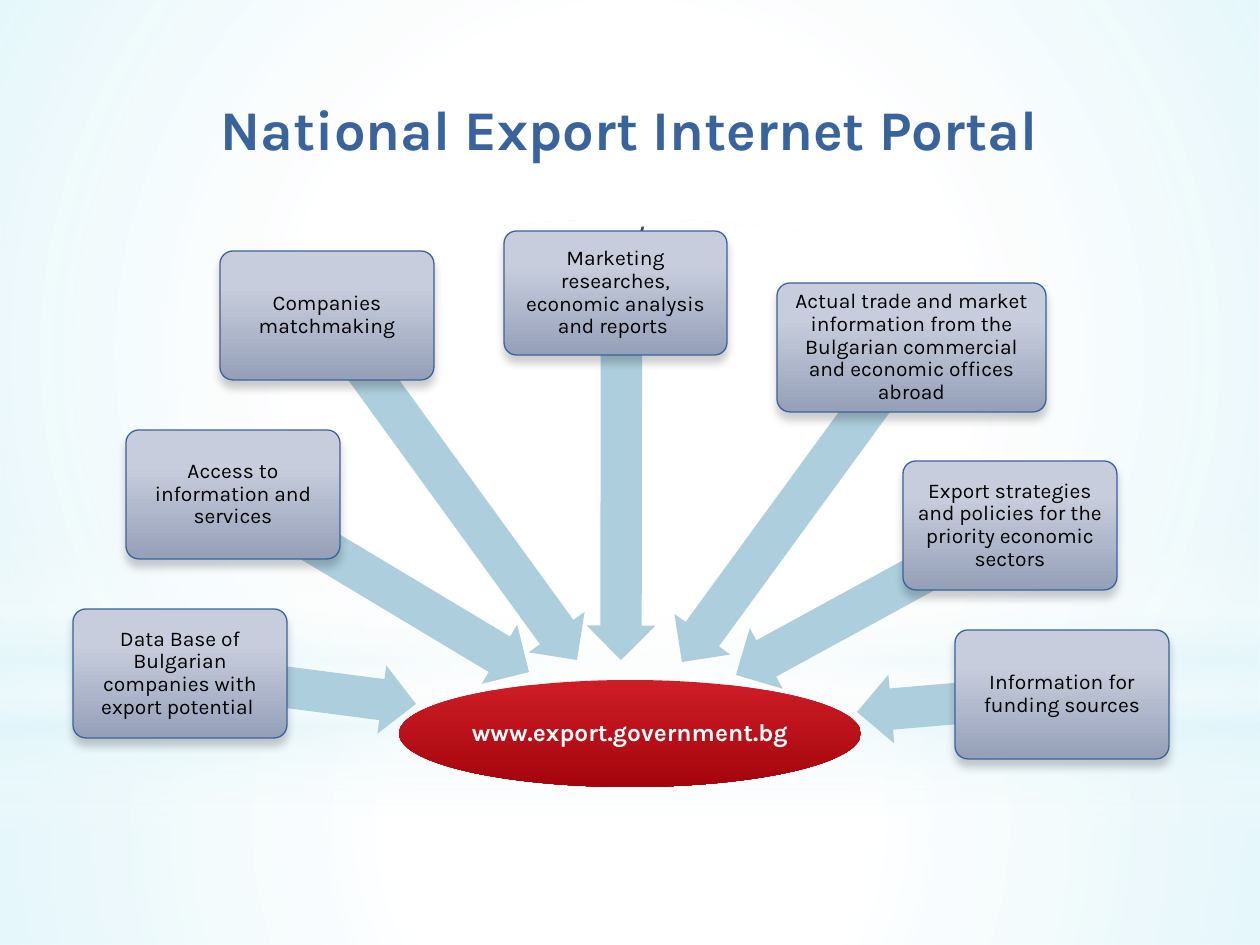
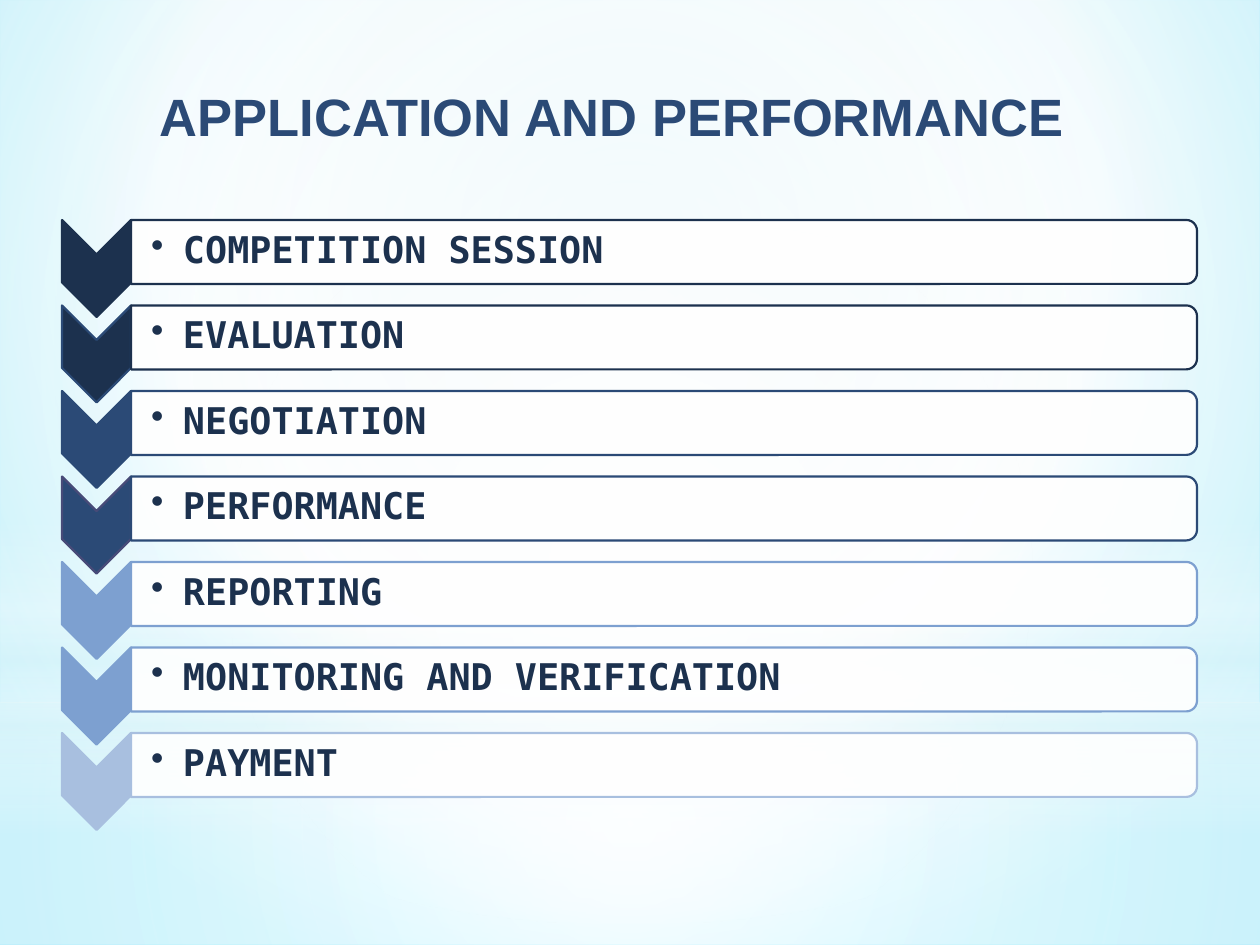
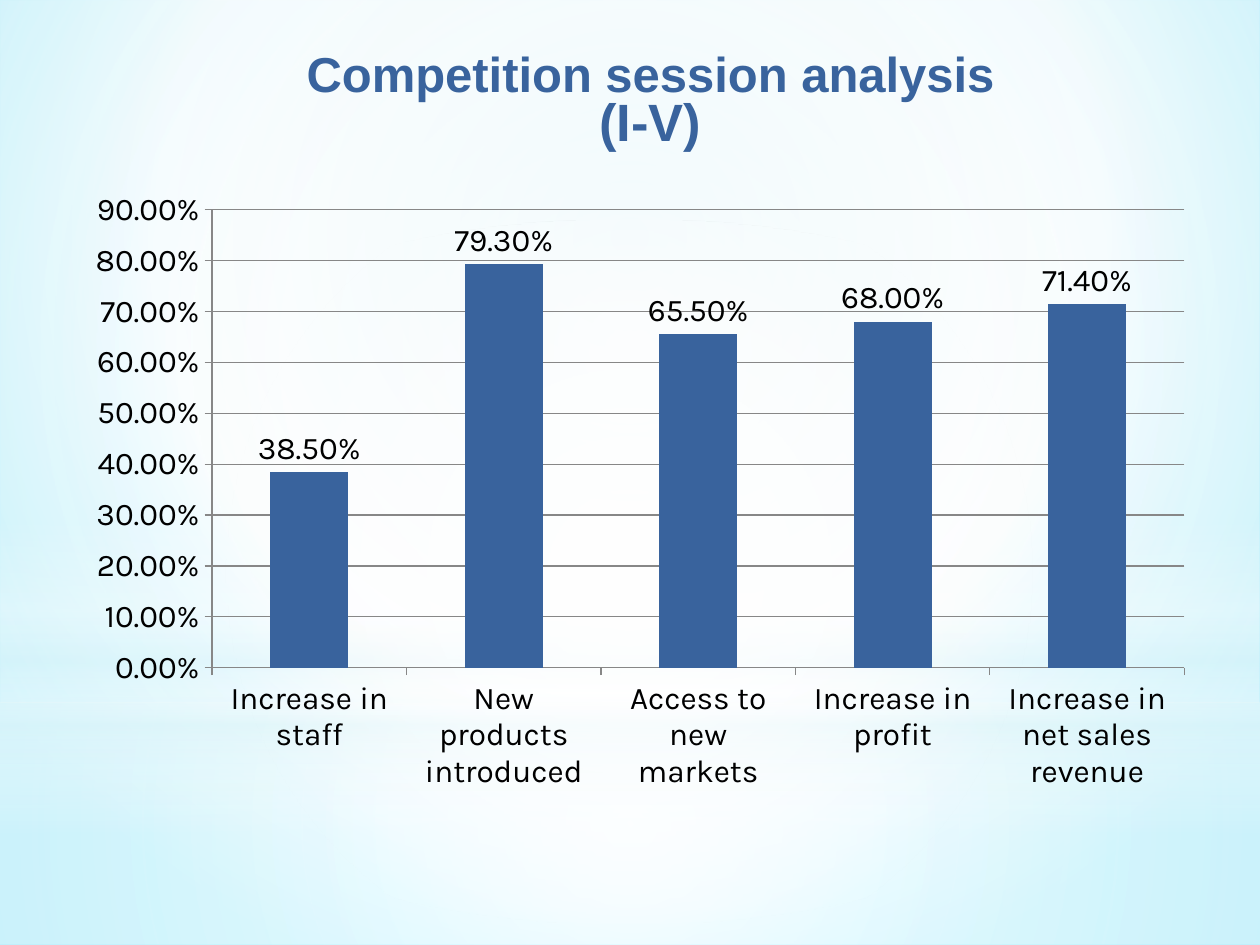
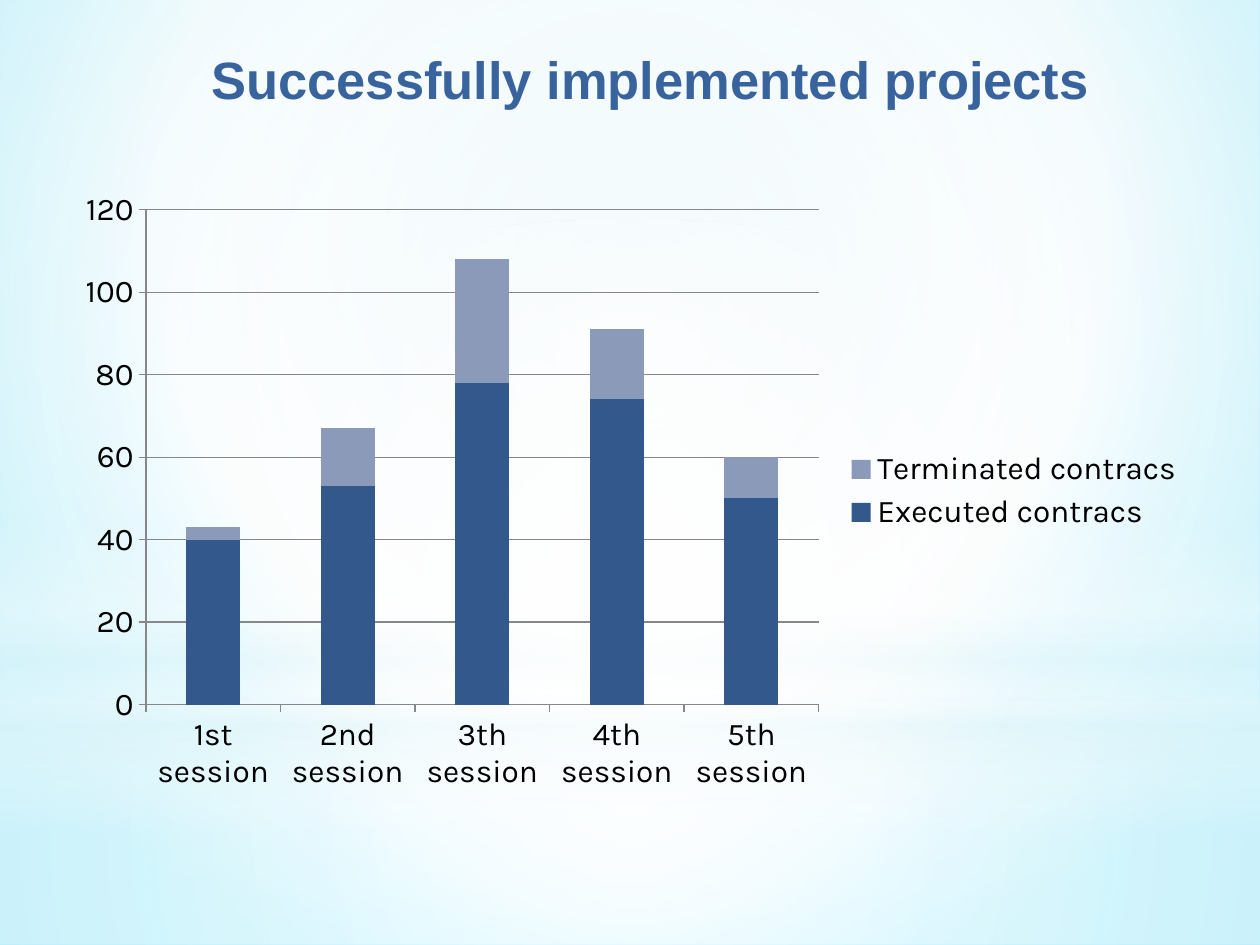
from dataclasses import dataclass
from math import atan2, degrees, hypot

from pptx import Presentation
from pptx.chart.data import CategoryChartData
from pptx.dml.color import RGBColor
from pptx.enum.chart import XL_CHART_TYPE as ChartType
from pptx.enum.chart import XL_LABEL_POSITION as LabelPosition
from pptx.enum.chart import XL_LEGEND_POSITION as LegendPosition
from pptx.enum.chart import XL_TICK_MARK as TickMark
from pptx.enum.shapes import MSO_SHAPE as Preset
from pptx.enum.text import MSO_ANCHOR as Anchor
from pptx.enum.text import PP_ALIGN as Align
from pptx.oxml import parse_xml
from pptx.oxml.ns import nsdecls, qn
from pptx.util import Pt

PX = 914400 / 126


@dataclass(frozen=True)
class Theme:
    """Colours, fonts and type sizes of the deck."""

    white: str = "FFFFFF"
    black: str = "000000"
    mist: str = "DEF5FA"
    sky: str = "CDEFF7"
    aqua: str = "7CE7FF"
    blue: str = "39639D"
    deep: str = "2B4A76"
    navy: str = "1C314E"
    violet: str = "474B78"
    mid: str = "7DA0D0"
    pale: str = "A8BFDF"
    arrow: str = "ADCEDC"
    node_top: str = "C7CDDC"
    node_foot: str = "95A0B9"
    hub_top: str = "CF1D26"
    hub_foot: str = "A4050D"
    executed: str = "32588C"
    terminated: str = "8C9ABA"
    grid: str = "878787"
    slash: str = "404040"
    body_font: str = "Karla"
    title_font: str = "Arial"
    step_font: str = "DejaVu Sans Mono"
    portal_title: int = 32
    title: int = 30
    title_small: int = 28
    step: int = 21
    slash_size: int = 20
    chart: int = 18
    hub: int = 14
    node: int = 12


THEME = Theme()


def emu(px):
    """Turn px into EMU."""
    return round(px * PX)


def rgb(colour):
    """Turn a hex string into a colour."""
    return RGBColor.from_string(colour)


def gradient(props, stops, focus=None):
    """Replace the solid fill in props by a vertical gradient, or a round one about focus."""
    marks = "".join(
        f'<a:gs pos="{place * 1000}"><a:srgbClr val="{colour}">'
        f'<a:alpha val="{alpha * 1000}"/></a:srgbClr></a:gs>'
        for place, colour, alpha in stops
    )
    course = '<a:lin ang="5400000" scaled="0"/>'
    if focus:
        sides = " ".join(f'{side}="{share * 1000}"' for side, share in zip("ltrb", focus))
        course = f'<a:path path="circle"><a:fillToRect {sides}/></a:path>'
    fill = parse_xml(
        f'<a:gradFill {nsdecls("a")} rotWithShape="1"><a:gsLst>{marks}</a:gsLst>{course}</a:gradFill>'
    )
    props.replace(props.find(qn("a:solidFill")), fill)


def add_shape(page, preset, box, fill, edge=None, weight=1.25, turn=0):
    """Add a flat preset shape whose box is measured before it is turned."""
    shape = page.shapes.add_shape(preset, *map(emu, box))
    shape.shadow.inherit = False
    shape.rotation = turn
    shape.fill.solid()
    shape.fill.fore_color.rgb = rgb(fill)
    if edge:
        shape.line.color.rgb = rgb(edge)
        shape.line.width = Pt(weight)
    else:
        shape.line.fill.background()
    return shape


def add_upright(page, preset, box, fill, edge):
    """Add a shape turned by a right angle that covers the given box."""
    left, top, width, height = box
    shift = (width - height) / 2
    turned = (left + shift, top - shift, height, width)
    return add_shape(page, preset, turned, fill, edge, turn=90)


def write(frame, lines, font, colour, bold=False, anchor=Anchor.MIDDLE,
          align=Align.CENTER, spacing=1.0, insets=(13, 6, 13, 6)):
    """Fill a text frame with lines of (text, size)."""
    frame.word_wrap = True
    frame.vertical_anchor = anchor
    frame.margin_left, frame.margin_top, frame.margin_right, frame.margin_bottom = map(emu, insets)
    for index, (text, size) in enumerate(lines):
        para = frame.add_paragraph() if index else frame.paragraphs[0]
        para.alignment = align
        para.line_spacing = spacing
        span = para.add_run()
        span.text = text
        span.font.name = font
        span.font.size = Pt(size)
        span.font.bold = bold
        span.font.color.rgb = rgb(colour)


def add_text(page, box, lines, font, colour, **style):
    """Add a text box and return its frame."""
    frame = page.shapes.add_textbox(*map(emu, box)).text_frame
    write(frame, lines, font, colour, **style)
    return frame


def add_title(page, box, lines, font=THEME.title_font, colour=THEME.blue,
              anchor=Anchor.BOTTOM, spacing=0.8):
    """Add a bold centred slide title."""
    add_text(page, box, lines, font, colour, bold=True, anchor=anchor, spacing=spacing)


def build_backdrop(page):
    """Draw the soft light shared by all slides and move it to the layout."""
    white, mist, centre = THEME.white, THEME.mist, (50, 50, 50, 50)
    glows = [
        (Preset.RECTANGLE, (0, 703, 1260, 242),
         [(0, white, 91), (37, white, 76), (100, mist, 79)], centre),
        (Preset.RECTANGLE, (0, 0, 1260, 703),
         [(0, white, 89), (48, white, 62), (100, mist, 79)], centre),
        (Preset.RECTANGLE, (0, 519, 1260, 315),
         [(0, white, 0), (29, white, 30), (45, mist, 40),
          (55, white, 26), (65, mist, 60), (100, white, 0)], None),
        (Preset.OVAL, (0, 220, 1260, 703), [(0, white, 100), (56, white, 0)], centre),
    ]
    shapes = []
    for preset, box, stops, focus in glows:
        shape = add_shape(page, preset, box, white)
        gradient(shape.element.spPr, stops, focus)
        shapes.append(shape)
    layout = page.slide_layout
    for holder in list(layout.placeholders):
        layout.shapes.element.remove(holder.element)
    for shape in shapes:
        layout.shapes.element.append(shape.element)


def set_background(page, tinted=True):
    """Paint the slide background white or with the blue glow."""
    page.background.fill.solid()
    page.background.fill.fore_color.rgb = rgb(THEME.white)
    if tinted:
        props = page.element.find(".//" + qn("p:bgPr"))
        stops = [(0, THEME.sky, 100), (60, THEME.white, 100), (100, THEME.aqua, 100)]
        gradient(props, stops, (20, 10, 20, 60))


def add_arrow(page, tail, tip, thickness=69):
    """Add a block arrow from tail to tip."""
    across, down = tip[0] - tail[0], tip[1] - tail[1]
    length = hypot(across, down)
    box = ((tail[0] + tip[0] - length) / 2, (tail[1] + tip[1] - thickness) / 2, length, thickness)
    turn = (degrees(atan2(down, across)) + 180) % 360
    arrow = add_shape(page, Preset.LEFT_ARROW, box, THEME.arrow, turn=turn)
    arrow.adjustments[0] = 0.6
    arrow.adjustments[1] = 0.5


def add_node(page, box, text):
    """Add a shaded rounded box with a label."""
    node = add_shape(page, Preset.ROUNDED_RECTANGLE, box, THEME.node_top, THEME.blue, 0.75)
    node.adjustments[0] = 0.1
    gradient(node.element.spPr, [(28, THEME.node_top, 100), (100, THEME.node_foot, 100)])
    node.element.spPr.find(qn("a:effectLst")).append(parse_xml(
        f'<a:outerShdw {nsdecls("a")} blurRad="{Pt(5)}" dist="{Pt(4)}" dir="5400000" rotWithShape="0">'
        f'<a:srgbClr val="{THEME.black}"><a:alpha val="20000"/></a:srgbClr></a:outerShdw>'
    ))
    write(node.text_frame, [(text, THEME.node)], THEME.body_font, THEME.black,
          spacing=0.9, insets=(4, 4, 4, 4))


def build_hub(page, box):
    """Add the red ellipse with the portal address."""
    hub = add_shape(page, Preset.OVAL, box, THEME.hub_top)
    gradient(hub.element.spPr, [(0, THEME.hub_top, 100), (100, THEME.hub_foot, 100)])
    write(hub.text_frame, [("www.export.government.bg", THEME.hub)], THEME.body_font,
          THEME.white, bold=True, spacing=0.9, insets=(1, 1, 1, 1))


def build_portal(page, box):
    """Place the hub and the services that point at it inside box."""
    left, top, width, height = box
    services = [
        ("Data Base of Bulgarian companies with export potential ", (0, 378, 214, 129), (343, 473), 0),
        ("Access to information and services", (53, 199, 214, 129), (456, 441), 0),
        ("Companies matchmaking", (147, 20, 214, 129), (504, 429), 0),
        ("Marketing researches, economic analysis and reports ", (431, 0, 223, 124), (548, 429), 6),
        ("Actual trade and market information from the Bulgarian commercial "
         "and economic offices abroad", (704, 52, 269, 129), (609, 431), 0),
        ("Export strategies and policies for the priority economic sectors",
         (830, 230, 214, 129), (663, 444), 0),
        ("Information for funding sources", (882, 399, 214, 129), (784, 481), 0),
    ]
    hub_width, hub_height = 462, 107
    build_hub(page, (left + 326, top + height - hub_height, hub_width, hub_height))
    for text, (x, y, wide, high), (tip_x, tip_y), shift in services:
        tail = (left + x + wide / 2 + shift, top + y + high / 2)
        add_arrow(page, tail, (left + tip_x, top + tip_y))
        add_node(page, (left + x, top + y, wide, high), text)


def add_step(page, box, text, fill, edge):
    """Add one chevron with its bulleted bar."""
    left, top, width, height = box
    notch, bar = 69, 64
    add_upright(page, Preset.CHEVRON, (left, top, notch, height), fill, edge)
    bar_box = (left + notch, top, width - notch, bar)
    panel = add_upright(page, Preset.ROUND_2_SAME_RECTANGLE, bar_box, THEME.white, fill)
    colour = panel.element.spPr.find(qn("a:solidFill")).find(qn("a:srgbClr"))
    colour.append(parse_xml(f'<a:alpha {nsdecls("a")} val="90000"/>'))
    frame = add_text(page, (left + notch, top + 3, width - notch - 3, bar - 7),
                     [(text, THEME.step)], THEME.step_font, THEME.navy, bold=True,
                     align=Align.LEFT, spacing=0.9, insets=(20, 1, 1, 1))
    props = frame.paragraphs[0]._p.get_or_add_pPr()
    props.set("marL", str(emu(32)))
    props.set("indent", str(-emu(32)))
    props.append(parse_xml(f'<a:buChar {nsdecls("a")} char="•"/>'))


def build_steps(page, box):
    """Spread the steps evenly down the box."""
    left, top, width, height = box
    steps = [
        ("COMPETITION SESSION", THEME.navy, THEME.navy),
        ("EVALUATION", THEME.navy, THEME.deep),
        ("NEGOTIATION", THEME.deep, THEME.deep),
        ("PERFORMANCE", THEME.deep, THEME.violet),
        ("REPORTING", THEME.mid, THEME.mid),
        ("MONITORING AND VERIFICATION", THEME.mid, THEME.mid),
        ("PAYMENT", THEME.pale, THEME.pale),
    ]
    chevron = 97
    pitch = (height - chevron) / (len(steps) - 1)
    for row, (text, fill, edge) in enumerate(steps):
        add_step(page, (left, top + row * pitch, width, chevron), text, fill, edge)


def build_columns(page, box, kind, categories, series, top_value, unit, number_format="General"):
    """Add a column chart from series of (name, values, colour) and return it."""
    data = CategoryChartData(number_format=number_format)
    data.categories = categories
    for name, values, _ in series:
        data.add_series(name, values)
    chart = page.shapes.add_chart(kind, *map(emu, box), data).chart
    chart.has_title = False
    chart.has_legend = False
    chart.font.name = THEME.body_font
    chart.font.size = Pt(THEME.chart)
    chart.font.color.rgb = rgb(THEME.black)
    plot = chart.plots[0]
    plot.gap_width = 150
    plot.vary_by_categories = False
    for drawn, (_, _, colour) in zip(plot.series, series):
        drawn.format.fill.solid()
        drawn.format.fill.fore_color.rgb = rgb(colour)
    scale = chart.value_axis
    scale.minimum_scale, scale.maximum_scale, scale.major_unit = 0, top_value, unit
    scale.has_major_gridlines = True
    scale.tick_labels.number_format = number_format
    scale.tick_labels.number_format_is_linked = False
    for axis in (chart.category_axis, scale):
        axis.major_tick_mark = TickMark.OUTSIDE
        axis.minor_tick_mark = TickMark.NONE
    for rule in (scale.major_gridlines, scale, chart.category_axis):
        rule.format.line.color.rgb = rgb(THEME.grid)
        rule.format.line.width = Pt(0.75)
    return chart


def portal_slide(page):
    """Build the slide on the export portal."""
    set_background(page, tinted=False)
    slash = add_text(page, (158, 212, 963, 620), [("/", THEME.slash_size)],
                     THEME.title_font, THEME.slash, anchor=Anchor.TOP)
    slash.paragraphs[0].space_before = Pt(12)
    add_title(page, (15, 73, 1229, 95), [("National Export Internet Portal", THEME.portal_title)],
              font=THEME.body_font, spacing=0.85)
    build_portal(page, (73, 231, 1097, 556))


def steps_slide(page):
    """Build the slide on the application steps."""
    set_background(page)
    build_steps(page, (62, 220, 1135, 610))
    add_title(page, (19, 42, 1186, 147), [("APPLICATION AND PERFORMANCE", THEME.title)],
              colour=THEME.deep, anchor=Anchor.MIDDLE, spacing=1.0)


def analysis_slide(page):
    """Build the slide on the session analysis."""
    set_background(page)
    add_title(page, (73, 32, 1155, 126),
              [("Competition session analysis", THEME.title_small), ("(I-V)", THEME.title)])
    categories = ["Increase in staff", "New products introduced", "Access to new markets",
                  "Increase in profit", "Increase in net sales revenue"]
    series = [("Series 1", (0.385, 0.793, 0.655, 0.68, 0.714), THEME.blue)]
    chart = build_columns(page, (73, 179, 1134, 624), ChartType.COLUMN_CLUSTERED,
                          categories, series, 0.9, 0.1, "0.00%")
    labels = chart.plots[0].series[0].data_labels
    labels.show_value = True
    labels.number_format = "0.00%"
    labels.number_format_is_linked = False
    labels.position = LabelPosition.OUTSIDE_END


def projects_slide(page):
    """Build the slide on the implemented projects."""
    set_background(page)
    add_title(page, (73, 32, 1155, 84), [("Successfully implemented projects", THEME.title)])
    categories = [f"{order} session" for order in ("1st", "2nd", "3th", "4th", "5th")]
    series = [
        ("Executed contracs", (40, 53, 78, 74, 50), THEME.executed),
        ("Terminated contracs", (3, 14, 30, 17, 10), THEME.terminated),
    ]
    chart = build_columns(page, (63, 179, 1134, 624), ChartType.COLUMN_STACKED,
                          categories, series, 120, 20)
    chart.plots[0].overlap = 100
    chart.has_legend = True
    chart.legend.position = LegendPosition.RIGHT
    chart.legend.include_in_layout = False


def main():
    """Build the deck and save it."""
    deck = Presentation()
    deck.slide_width, deck.slide_height = emu(1260), emu(945)
    blank = deck.slide_layouts[6]
    builders = (portal_slide, steps_slide, analysis_slide, projects_slide)
    pages = [deck.slides.add_slide(blank) for _ in builders]
    build_backdrop(pages[0])
    for build, page in zip(builders, pages):
        build(page)
    deck.save("out.pptx")


if __name__ == "__main__":
    main()
